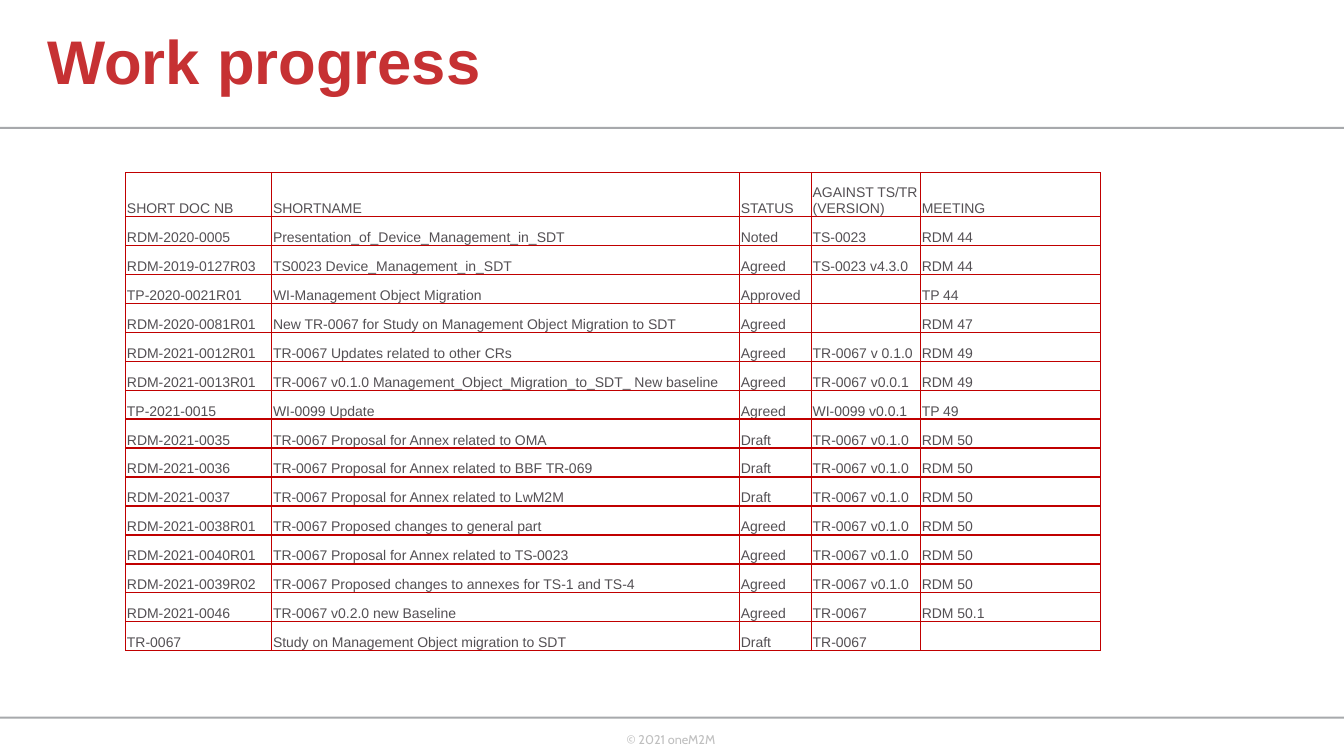
from dataclasses import dataclass
from typing import NamedTuple

from lxml.etree import SubElement
from pptx import Presentation
from pptx.dml.color import RGBColor
from pptx.enum.shapes import MSO_SHAPE
from pptx.enum.text import MSO_ANCHOR
from pptx.oxml.ns import qn
from pptx.slide import Slide
from pptx.table import _Cell
from pptx.text.text import TextFrame
from pptx.util import Cm, Pt


@dataclass(frozen=True)
class Theme:
    background: str = "FFFFFF"
    title: str = "C63133"
    body: str = "545054"
    footer: str = "BFBFBF"
    rule: str = "A7A9AC"
    border: str = "C00000"
    font: str = "Arial"
    footer_font: str = "Cabin"
    title_size: float = 44
    body_size: float = 10
    footer_size: float = 9
    border_width: float = 1


class Box(NamedTuple):
    left: float
    top: float
    width: float
    height: float


class Document(NamedTuple):
    number: str
    name: str
    status: str
    against: str
    meeting: str


THEME = Theme()
SLIDE_WIDTH, SLIDE_HEIGHT = 33.87, 19.05
RULES = [Box(0, top, SLIDE_WIDTH, 0.05) for top in (3.2, 18.06)]
TITLE_BOX = Box(0.94, 0, 26, 3.25)
FOOTER_BOX = Box(15.54, 18.31, 2.77, 1.02)
TABLE_LEFT, TABLE_TOP = 3.17, 4.35
COLUMN_WIDTHS = [3.68, 11.79, 1.81, 2.75, 4.54]
HEADER_HEIGHT, ROW_HEIGHT = 1.1, 0.73
CELL_INSET = 0.03

DOCUMENTS = [
    Document("SHORT DOC NB", "SHORTNAME", "STATUS", "AGAINST TS/TR (VERSION)", "MEETING"),
    Document("RDM-2020-0005", "Presentation_of_Device_Management_in_SDT", "Noted", "TS-0023", "RDM 44"),
    Document("RDM-2019-0127R03", "TS0023 Device_Management_in_SDT", "Agreed", "TS-0023 v4.3.0", "RDM 44"),
    Document("TP-2020-0021R01", "WI-Management Object Migration", "Approved", "", "TP 44"),
    Document("RDM-2020-0081R01", "New TR-0067 for Study on Management Object Migration to SDT",
             "Agreed", "", "RDM 47"),
    Document("RDM-2021-0012R01", "TR-0067 Updates related to other CRs", "Agreed", "TR-0067 v 0.1.0", "RDM 49"),
    Document("RDM-2021-0013R01", "TR-0067 v0.1.0 Management_Object_Migration_to_SDT_ New baseline",
             "Agreed", "TR-0067 v0.0.1", "RDM 49"),
    Document("TP-2021-0015", "WI-0099 Update", "Agreed", "WI-0099 v0.0.1", "TP 49"),
    Document("RDM-2021-0035", "TR-0067 Proposal for Annex related to OMA", "Draft", "TR-0067 v0.1.0", "RDM 50"),
    Document("RDM-2021-0036", "TR-0067 Proposal for Annex related to BBF TR-069",
             "Draft", "TR-0067 v0.1.0", "RDM 50"),
    Document("RDM-2021-0037", "TR-0067 Proposal for Annex related to LwM2M", "Draft", "TR-0067 v0.1.0", "RDM 50"),
    Document("RDM-2021-0038R01", "TR-0067 Proposed changes to general part", "Agreed", "TR-0067 v0.1.0", "RDM 50"),
    Document("RDM-2021-0040R01", "TR-0067 Proposal for Annex related to TS-0023",
             "Agreed", "TR-0067 v0.1.0", "RDM 50"),
    Document("RDM-2021-0039R02", "TR-0067 Proposed changes to annexes for TS-1 and TS-4",
             "Agreed", "TR-0067 v0.1.0", "RDM 50"),
    Document("RDM-2021-0046", "TR-0067 v0.2.0 new Baseline", "Agreed", "TR-0067", "RDM 50.1"),
    Document("TR-0067", "Study on Management Object migration to SDT", "Draft", "TR-0067", ""),
]


def color(value: str) -> RGBColor:
    return RGBColor.from_string(value)


def write_text(frame: TextFrame, text: str, *, size: float, fill: str, font: str = THEME.font,
               bold: bool = False, line_spacing: float = 1.0) -> None:
    paragraph = frame.paragraphs[0]
    paragraph.line_spacing = line_spacing
    if not text:
        SubElement(paragraph._p, qn("a:endParaRPr"), sz=str(int(size * 100)))
        return
    run = paragraph.add_run()
    run.text = text
    run.font.name = font
    run.font.size = Pt(size)
    run.font.bold = bold
    run.font.color.rgb = color(fill)


def add_text_box(slide: Slide, box: Box, *, wrap: bool, anchor: MSO_ANCHOR) -> TextFrame:
    frame = slide.shapes.add_textbox(*map(Cm, box)).text_frame
    frame.word_wrap = wrap
    frame.vertical_anchor = anchor
    return frame


def add_rule(slide: Slide, box: Box) -> None:
    shape = slide.shapes.add_shape(MSO_SHAPE.RECTANGLE, *map(Cm, box))
    shape.shadow.inherit = False
    shape.fill.solid()
    shape.fill.fore_color.rgb = color(THEME.rule)
    shape.line.fill.background()


def format_cell(cell: _Cell) -> None:
    properties = cell._tc.get_or_add_tcPr()
    for side in ("lnL", "lnR", "lnT", "lnB"):
        line = SubElement(properties, qn(f"a:{side}"), w=str(Pt(THEME.border_width)))
        SubElement(SubElement(line, qn("a:solidFill")), qn("a:srgbClr"), val=THEME.border)
    cell.fill.solid()
    cell.fill.fore_color.rgb = color(THEME.background)
    cell.vertical_anchor = MSO_ANCHOR.BOTTOM
    cell.margin_left = cell.margin_right = cell.margin_top = Cm(CELL_INSET)
    cell.margin_bottom = 0


def add_document_table(slide: Slide) -> None:
    heights = [HEADER_HEIGHT] + [ROW_HEIGHT] * (len(DOCUMENTS) - 1)
    box = Box(TABLE_LEFT, TABLE_TOP, sum(COLUMN_WIDTHS), sum(heights))
    table = slide.shapes.add_table(len(DOCUMENTS), len(COLUMN_WIDTHS), *map(Cm, box)).table
    table.first_row = table.horz_banding = False
    for column, width in zip(table.columns, COLUMN_WIDTHS):
        column.width = Cm(width)
    for row, height, document in zip(table.rows, heights, DOCUMENTS):
        row.height = Cm(height)
        for cell, text in zip(row.cells, document):
            format_cell(cell)
            write_text(cell.text_frame, text, size=THEME.body_size, fill=THEME.body)


def main() -> None:
    presentation = Presentation()
    presentation.slide_width = Cm(SLIDE_WIDTH)
    presentation.slide_height = Cm(SLIDE_HEIGHT)
    slide = presentation.slides.add_slide(presentation.slide_layouts[6])
    slide.background.fill.solid()
    slide.background.fill.fore_color.rgb = color(THEME.background)
    for box in RULES:
        add_rule(slide, box)
    footer = add_text_box(slide, FOOTER_BOX, wrap=False, anchor=MSO_ANCHOR.TOP)
    write_text(footer, "© 2021 oneM2M", size=THEME.footer_size, fill=THEME.footer, font=THEME.footer_font)
    title = add_text_box(slide, TITLE_BOX, wrap=True, anchor=MSO_ANCHOR.MIDDLE)
    write_text(title, "Work progress", size=THEME.title_size, fill=THEME.title, bold=True, line_spacing=0.9)
    add_document_table(slide)
    presentation.save("out.pptx")


if __name__ == "__main__":
    main()
